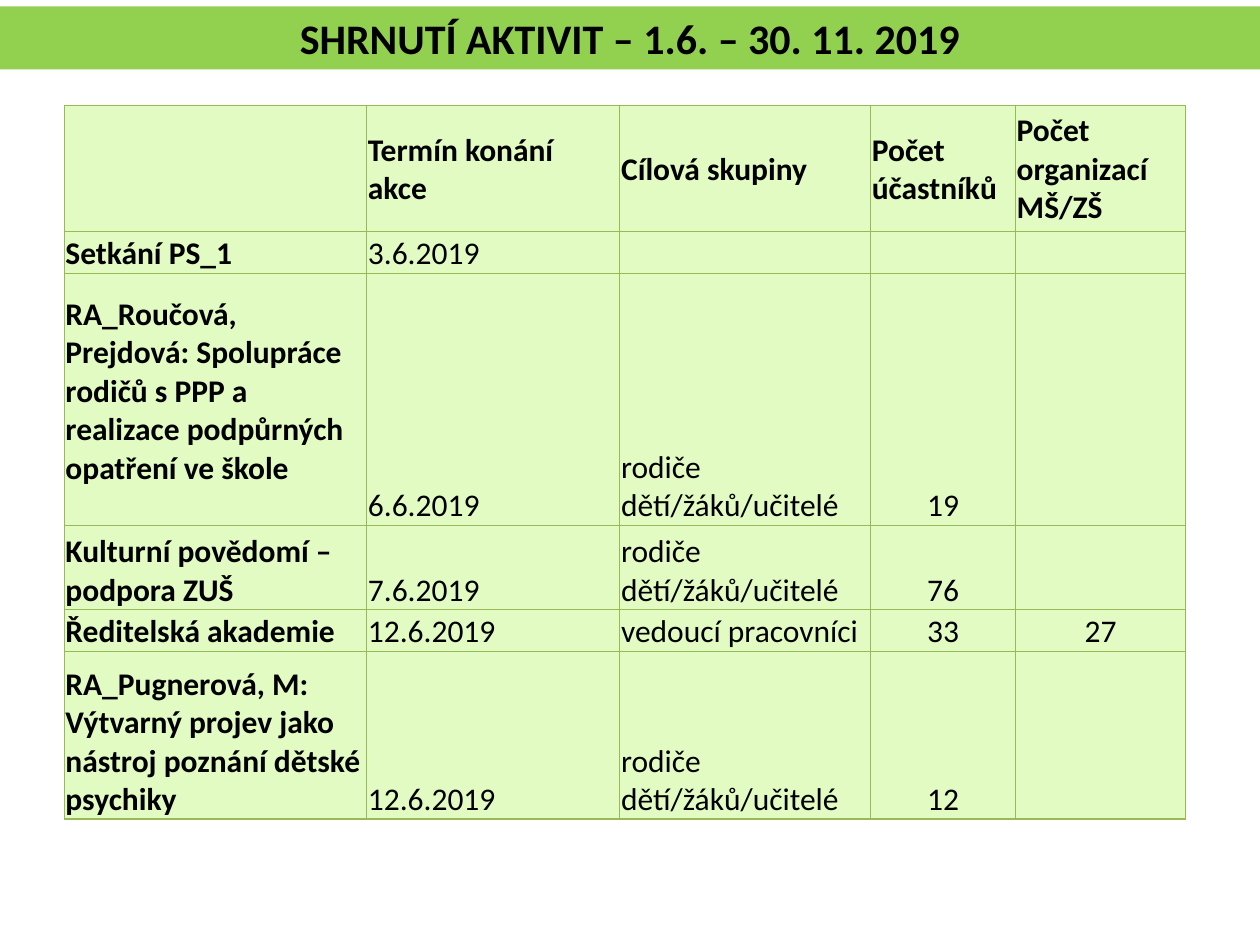
from lxml.etree import SubElement
from pptx import Presentation
from pptx.dml.color import RGBColor
from pptx.enum.text import MSO_ANCHOR as Anchor, MSO_AUTO_SIZE as Fit, PP_ALIGN as Align
from pptx.oxml.ns import qn
from pptx.util import Inches, Pt

BLACK = RGBColor(0x00, 0x00, 0x00)
GREEN = RGBColor(0x92, 0xD0, 0x50)
PALE = RGBColor(0xE2, 0xFB, 0xC2)
EDGE = RGBColor(0x98, 0xB9, 0x55)

TITLE = "SHRNUTÍ AKTIVIT – 1.6. – 30. 11. 2019"
PARENTS = "rodiče dětí/žáků/učitelé"
ROWS = [
    ["", "Termín konání akce", "Cílová skupiny", "Počet účastníků", "Počet organizací MŠ/ZŠ"],
    ["Setkání PS_1", "3.6.2019", "", "", ""],
    ["RA_Roučová, Prejdová: Spolupráce \vrodičů s PPP a realizace podpůrných opatření ve škole",
     "6.6.2019", PARENTS, "19", ""],
    ["Kulturní povědomí – podpora ZUŠ", "7.6.2019", PARENTS, "76", ""],
    ["Ředitelská akademie", "12.6.2019", "vedoucí pracovníci", "33", "27"],
    ["RA_Pugnerová, M: Výtvarný projev jako nástroj poznání dětské psychiky",
     "12.6.2019", PARENTS, "12", ""],
]
WIDTHS = [2.4, 2.01, 1.99, 1.15, 1.35]
HEIGHTS = [1, 0.33, 2, 0.67, 0.33, 1.33]
PAD = {"margin_left": Inches(0.01), "margin_right": Inches(0.01),
       "margin_top": Inches(0.01), "margin_bottom": 0}


def put(item, values):
    for name, value in values.items():
        setattr(item, name, value)


def write(frame, text, size, bold, align):
    par = frame.paragraphs[0]
    par.text = text
    par.alignment = align
    for run in par.runs:
        put(run.font, {"name": "Calibri", "size": Pt(size), "bold": bold})
        run.font.color.rgb = BLACK


def add_title(slide):
    bar = slide.shapes.title
    put(bar, {"left": 0, "top": Inches(0.05), "width": Inches(10), "height": Inches(0.5)})
    bar.fill.solid()
    bar.fill.fore_color.rgb = GREEN
    put(bar.text_frame, {"word_wrap": True, "auto_size": Fit.NONE,
                         "vertical_anchor": Anchor.MIDDLE})
    write(bar.text_frame, TITLE, 24, True, Align.CENTER)


def edge(cell):
    """Draw a thin line on all four sides; call it before the cell is filled."""
    props = cell._tc.get_or_add_tcPr()
    for side in ("lnL", "lnR", "lnT", "lnB"):
        line = SubElement(props, qn(f"a:{side}"), w=str(Pt(0.75)))
        fill = SubElement(line, qn("a:solidFill"))
        SubElement(fill, qn("a:srgbClr"), val=str(EDGE))


def add_table(slide):
    table = slide.shapes.add_table(
        len(ROWS), len(WIDTHS), Inches(0.51), Inches(0.84),
        Inches(sum(WIDTHS)), Inches(sum(HEIGHTS))).table
    for col, width in zip(table.columns, WIDTHS):
        col.width = Inches(width)
    for row, height in zip(table.rows, HEIGHTS):
        row.height = Inches(height)
    for r, texts in enumerate(ROWS):
        for c, text in enumerate(texts):
            cell = table.cell(r, c)
            edge(cell)
            cell.fill.solid()
            cell.fill.fore_color.rgb = PALE
            put(cell, PAD)
            cell.vertical_anchor = Anchor.BOTTOM if r else Anchor.MIDDLE
            align = Align.CENTER if r and c > 2 else Align.LEFT
            write(cell.text_frame, text, 18, r == 0 or c == 0, align)
    # The first lecture sits one text line above the foot of its row.
    table.cell(2, 0).margin_bottom = Inches(0.3)


def main():
    deck = Presentation()
    put(deck, {"slide_width": Inches(10), "slide_height": Inches(7.5)})
    slide = deck.slides.add_slide(deck.slide_layouts[5])
    add_title(slide)
    add_table(slide)
    deck.save("out.pptx")


if __name__ == "__main__":
    main()
